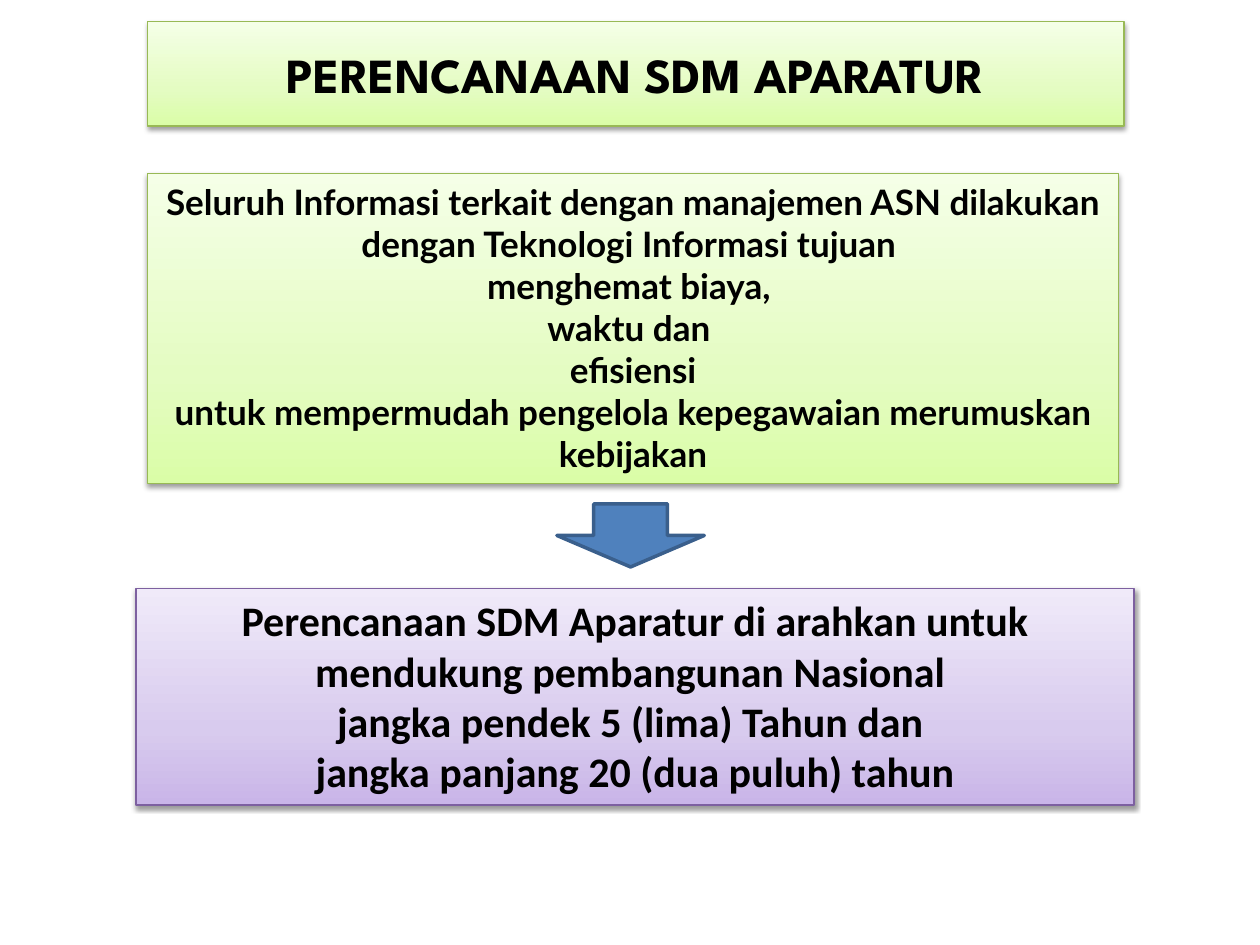
import pptx
import pptx.util
from pptx.dml.color import RGBColor
from pptx.enum.shapes import MSO_SHAPE
from pptx.enum.text import MSO_ANCHOR, MSO_AUTO_SIZE, PP_ALIGN
from pptx.oxml import parse_xml
from pptx.oxml.ns import nsdecls, qn
from pptx.util import Inches

BLACK = RGBColor(0x00, 0x00, 0x00)
BLUE = RGBColor(0x4F, 0x81, 0xBD)
BLUE_LINE = RGBColor(0x3A, 0x5F, 0x8C)
GREEN_LINE = RGBColor(0x98, 0xB9, 0x55)
PURPLE_LINE = RGBColor(0x7D, 0x60, 0xA0)
# Gradients run from the bottom edge to the top edge
GREENS = (RGBColor(0xDA, 0xFD, 0xA7), RGBColor(0xE4, 0xFC, 0xC2), RGBColor(0xF5, 0xFF, 0xE7))
PURPLES = (RGBColor(0xC9, 0xB5, 0xE8), RGBColor(0xD8, 0xCB, 0xEE), RGBColor(0xF0, 0xEA, 0xF9))
STOPS = (0, 35, 100)


def add_text(tf, lines, font="Calibri", size=24, color=BLACK, bold=True, align=PP_ALIGN.CENTER):
    """Write each line as a paragraph in one format."""
    for i, line in enumerate(lines):
        p = tf.add_paragraph() if i else tf.paragraphs[0]
        p.alignment = align
        r = p.add_run()
        r.text = line
        r.font.name = font
        r.font.size = pptx.util.Pt(size)
        r.font.bold = bold
        r.font.color.rgb = color


class SlideBuilder:
    """Holds the current slide and the shared box style."""

    def __init__(self, prs):
        self.s = prs.slides.add_slide(prs.slide_layouts[6])

    def shape(self, kind, at, line, width):
        sp = self.s.shapes.add_shape(kind, *(Inches(v) for v in at))
        sp.line.color.rgb = line
        sp.line.width = pptx.util.Pt(width)
        sp.shadow.inherit = False
        return sp

    def box(self, at, colors, line, lines, anchor=MSO_ANCHOR.TOP,
            fit=MSO_AUTO_SIZE.SHAPE_TO_FIT_TEXT, **fmt):
        sp = self.shape(MSO_SHAPE.RECTANGLE, at, line, 0.75)
        self.gradient(sp, colors)
        self.shadow(sp)
        tf = sp.text_frame
        tf.word_wrap = True
        tf.auto_size = fit
        tf.vertical_anchor = anchor
        add_text(tf, lines, **fmt)

    def gradient(self, sp, colors):
        sp.fill.gradient()
        sp.fill.gradient_angle = 90
        stops = sp._element.spPr.find(".//" + qn("a:gsLst"))
        for old in list(stops):
            stops.remove(old)
        for pos, color in zip(STOPS, colors):
            stops.append(parse_xml(
                f'<a:gs {nsdecls("a")} pos="{pos * 1000}"><a:srgbClr val="{color}"/></a:gs>'))

    def shadow(self, sp):
        blur, dist = pptx.util.Pt(3.1), pptx.util.Pt(1.6)
        sp._element.spPr.find(qn("a:effectLst")).append(parse_xml(
            f'<a:outerShdw {nsdecls("a")} blurRad="{blur}" dist="{dist}" dir="5400000" '
            f'rotWithShape="0"><a:srgbClr val="{BLACK}"><a:alpha val="38000"/></a:srgbClr>'
            '</a:outerShdw>'))

    def arrow(self, at):
        sp = self.shape(MSO_SHAPE.DOWN_ARROW, at, BLUE_LINE, 2)
        sp.fill.solid()
        sp.fill.fore_color.rgb = BLUE


def main():
    prs = pptx.Presentation()
    prs.slide_width, prs.slide_height = Inches(10), Inches(7.5)
    b = SlideBuilder(prs)

    # Title
    b.box((1.17, 0.17, 7.75, 0.83), GREENS, GREEN_LINE, ["PERENCANAAN SDM APARATUR"],
          anchor=MSO_ANCHOR.MIDDLE, fit=MSO_AUTO_SIZE.NONE, font="League Spartan", size=28)

    # Information technology and its aims
    b.box((1.17, 1.38, 7.71, 2.46), GREENS, GREEN_LINE, [
        "Seluruh Informasi terkait dengan manajemen ASN dilakukan "
        "dengan Teknologi Informasi tujuan ",
        "menghemat biaya, ",
        "waktu dan ",
        "efisiensi",
        "untuk mempermudah pengelola kepegawaian merumuskan kebijakan",
    ], font="Lato", size=20)

    # Arrow to the planning goal
    b.arrow((4.42, 4, 1.17, 0.5))

    # Planning goal
    b.box((1.08, 4.67, 7.92, 1.72), PURPLES, PURPLE_LINE, [
        "Perencanaan SDM Aparatur di arahkan untuk mendukung pembangunan Nasional ",
        "jangka pendek 5 (lima) Tahun dan ",
        "jangka panjang 20 (dua puluh) tahun",
    ])

    prs.save("out.pptx")


if __name__ == "__main__":
    main()
